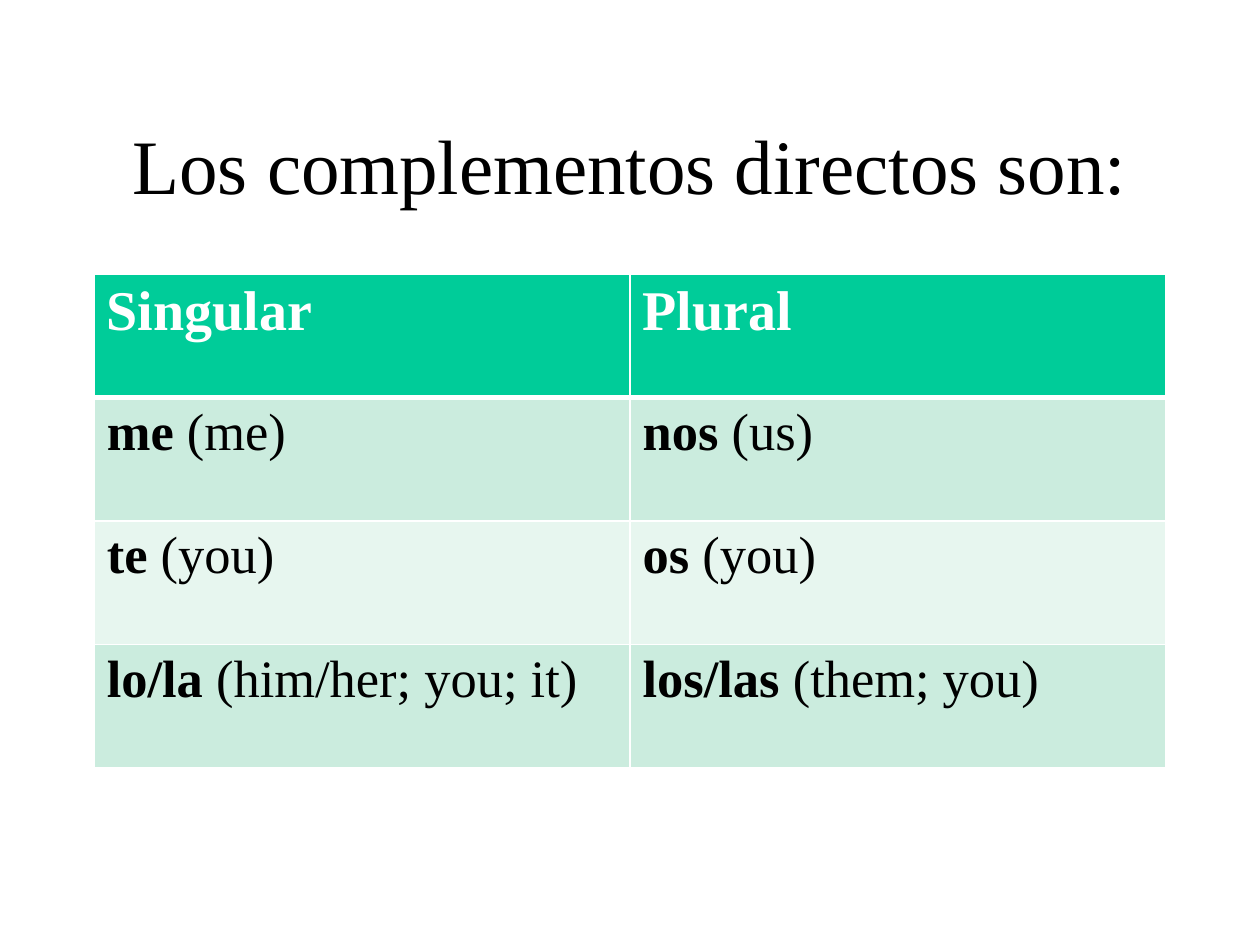
"""Build a slide with a table of Spanish direct object pronouns."""
import pptx
import pptx.util
import pptx.dml.color
import pptx.enum.text
import pptx.oxml
import pptx.oxml.ns

Cm = pptx.util.Cm
Pt = pptx.util.Pt
RGB = pptx.dml.color.RGBColor
BLACK = RGB(0x00, 0x00, 0x00)
WHITE = RGB(0xFF, 0xFF, 0xFF)
GREEN = RGB(0x00, 0xCC, 0x99)
MINT = RGB(0xCB, 0xEC, 0xDE)
PALE = RGB(0xE7, 0xF6, 0xEF)
FACE = "Times New Roman"
ROWS = [
    [("Singular", ""), ("Plural", "")],
    [("me", " (me)"), ("nos", " (us)")],
    [("te", " (you)"), ("os", " (you)")],
    [("lo/la", " (him/her; you; it)"), ("los/las", " (them; you)")],
]
FILLS = [GREEN, MINT, PALE, MINT]


def style(par, size, color):
    par.font.name = FACE
    par.font.size = Pt(size)
    par.font.color.rgb = color


def edge(cell, side, width):
    cell._tc.get_or_add_tcPr().append(pptx.oxml.parse_xml(
        f'<a:{side} {pptx.oxml.ns.nsdecls("a")} w="{Pt(width)}"><a:solidFill>'
        f'<a:srgbClr val="{WHITE}"/></a:solidFill></a:{side}>'))


deck = pptx.Presentation()
deck.slide_width = Cm(25.4)
deck.slide_height = Cm(19.05)
slide = deck.slides.add_slide(deck.slide_layouts[5])

title = slide.shapes.title
title.left, title.top = Cm(1.9), Cm(1.7)
title.width, title.height = Cm(21.6), Cm(3.18)
title.text_frame.text = "Los complementos directos son:"
title.text_frame.vertical_anchor = pptx.enum.text.MSO_ANCHOR.MIDDLE
head = title.text_frame.paragraphs[0]
head.alignment = pptx.enum.text.PP_ALIGN.CENTER
style(head, 44, BLACK)

table = slide.shapes.add_table(
    len(ROWS), 2, Cm(1.9), Cm(5.52), Cm(21.6), Cm(9.96)).table
for r, row in enumerate(ROWS):
    for c, (word, gloss) in enumerate(row):
        cell = table.cell(r, c)
        for side in ("lnL", "lnR", "lnT", "lnB"):
            thick = (r, side) in ((0, "lnB"), (1, "lnT"))
            edge(cell, side, 3 if thick else 1)
        cell.fill.solid()
        cell.fill.fore_color.rgb = FILLS[r]
        par = cell.text_frame.paragraphs[0]
        style(par, 30 if r else 32, BLACK if r else WHITE)
        run = par.add_run()
        run.text = word
        run.font.bold = True
        if gloss:
            run = par.add_run()
            run.text = gloss
            run.font.bold = False

deck.save("out.pptx")
